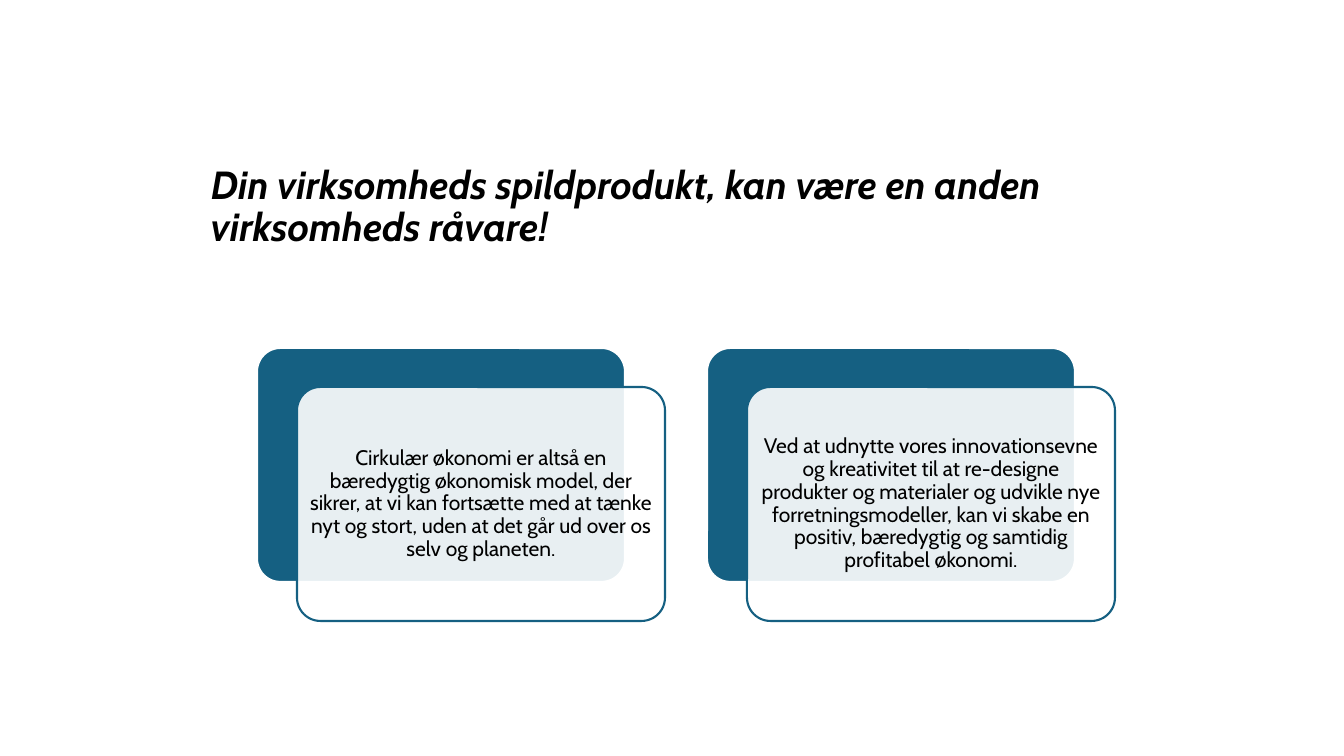
from pptx import Presentation
from pptx.dml.color import RGBColor
from pptx.enum.shapes import MSO_SHAPE as Shape
from pptx.enum.text import MSO_ANCHOR as Anchor, PP_ALIGN as Align
from pptx.oxml.xmlchemy import OxmlElement as Element
from pptx.util import Emu, Pt

# Content
TITLE = "Din virksomheds spildprodukt, kan være en anden virksomheds råvare!"
CARDS = [
    "Cirkulær økonomi er altså en bæredygtig økonomisk model, der sikrer, "
    "at vi kan fortsætte med at tænke nyt og stort, uden at det går ud over "
    "os selv og planeten.",
    "Ved at udnytte vores innovationsevne og kreativitet til at re-designe "
    "produkter og materialer og udvikle nye forretningsmodeller, kan vi "
    "skabe en positiv, bæredygtig og samtidig profitabel økonomi.",
]

# Style
FONT = "Cabin"
BLACK = RGBColor(0x00, 0x00, 0x00)
WHITE = RGBColor(0xFF, 0xFF, 0xFF)
TEAL = RGBColor(0x15, 0x60, 0x82)

# Layout in px
SCALE = 914400 / 100.8
WIDTH, HEIGHT = 1344, 756
TITLE_BOX = (211, 122, 841, 171)
LEFT, TOP = 257, 348
CARD_W, CARD_H = 368, 234
SHIFT_X, SHIFT_Y = 40, 39
STEP = 450
INSET = 6


def px(num):
    return Emu(round(num * SCALE))


def write(shape, text, size, inset, align):
    frame = shape.text_frame
    frame.word_wrap = True
    frame.vertical_anchor = Anchor.MIDDLE
    frame.margin_left = frame.margin_right = px(inset)
    frame.margin_top = frame.margin_bottom = px(inset)
    frame.text = text
    para = frame.paragraphs[0]
    para.alignment = align
    para.line_spacing = 0.9
    font = para.runs[0].font
    font.name, font.size = FONT, Pt(size)
    font.color.rgb = BLACK
    return font


def add_card(shapes, left, top, fill, line):
    card = shapes.add_shape(
        Shape.ROUNDED_RECTANGLE, px(left), px(top), px(CARD_W), px(CARD_H))
    card.adjustments[0] = 0.1
    card.shadow.inherit = False
    card.fill.solid()
    card.fill.fore_color.rgb = fill
    card.line.color.rgb = line
    card.line.width = Pt(1.5)
    return card


def main():
    deck = Presentation()
    deck.slide_width, deck.slide_height = px(WIDTH), px(HEIGHT)
    shapes = deck.slides.add_slide(deck.slide_layouts[6]).shapes

    # Title
    title = shapes.add_textbox(*map(px, TITLE_BOX))
    font = write(title, TITLE, 28, 0, Align.LEFT)
    font.bold = font.italic = True

    # Cards: a solid back and a translucent front with the text
    for col, text in enumerate(CARDS):
        left = LEFT + col * STEP
        add_card(shapes, left, TOP, TEAL, WHITE)
        front = add_card(shapes, left + SHIFT_X, TOP + SHIFT_Y, WHITE, TEAL)
        alpha = Element("a:alpha")
        alpha.set("val", "90000")
        front.fill._xPr.find(".//{*}srgbClr").append(alpha)
        write(front, text, 15, INSET, Align.CENTER)

    deck.save("out.pptx")


if __name__ == "__main__":
    main()
